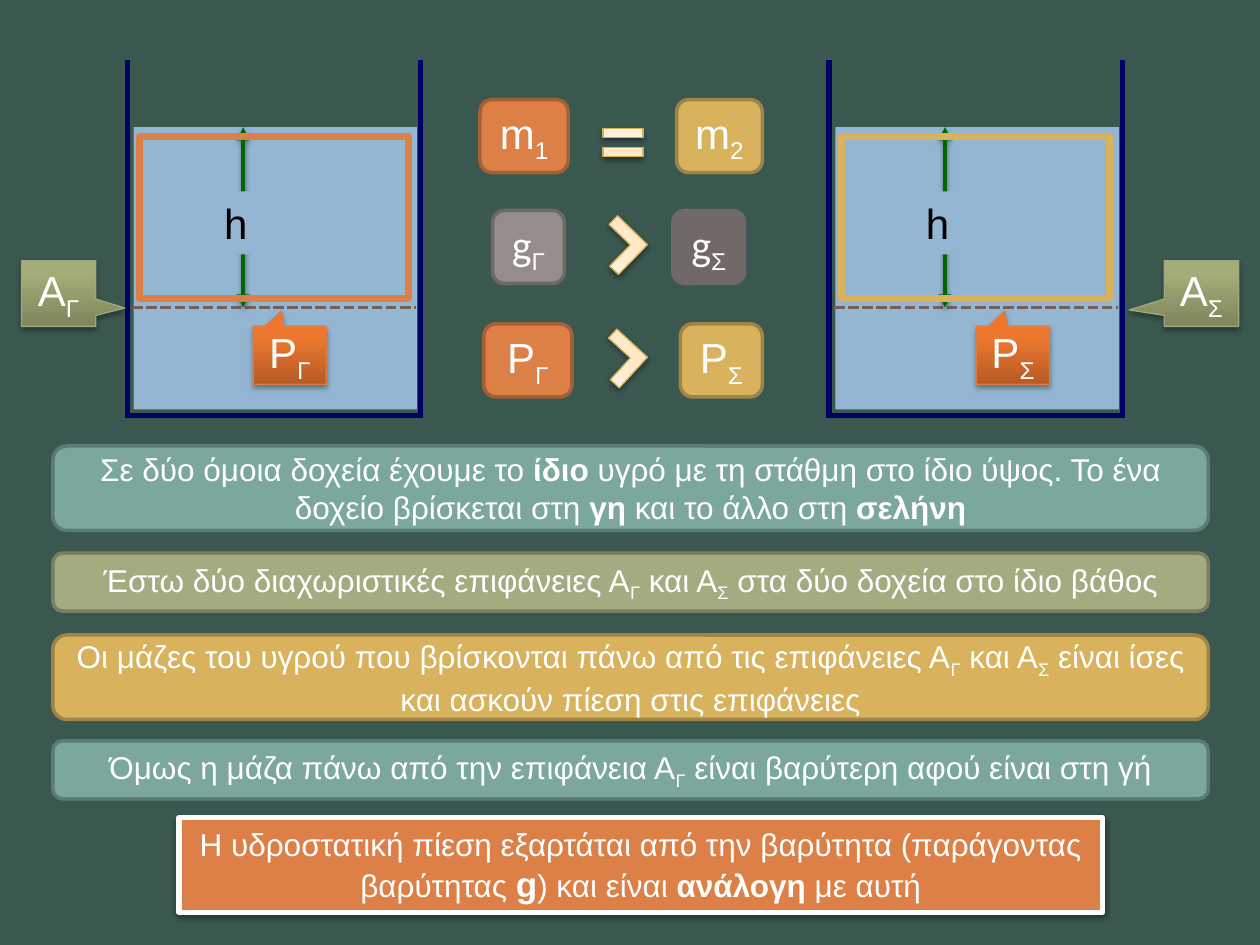
from dataclasses import dataclass

from lxml.etree import SubElement
from pptx import Presentation
from pptx.dml.color import RGBColor
from pptx.enum.dml import MSO_LINE_DASH_STYLE as Dash
from pptx.enum.shapes import MSO_CONNECTOR as Connector, MSO_SHAPE as Shape
from pptx.enum.text import MSO_ANCHOR as Anchor, PP_ALIGN as Align
from pptx.oxml.ns import qn
from pptx.util import Inches, Pt


@dataclass(frozen=True)
class Theme:
    background: str = "3A5750"
    white: str = "FFFFFF"
    black: str = "000000"
    wall: str = "000066"
    liquid: str = "94B6D2"
    dash: str = "775F55"
    arrow: str = "006600"
    # (fill, outline) pairs
    teal: tuple = ("7BA79D", "5B7C74")
    olive: tuple = ("A5AB81", "7A7F5F")
    gold: tuple = ("D8B25C", "A08444")
    orange: tuple = ("DD8047", "A35F35")
    light_grey: tuple = ("968C8C", "6F6868")
    dark_grey: tuple = ("726868", "6F6868")
    # (gradient stops, outline) pairs
    olive_glow: tuple = (((0, "7E845C"), (80, "A4AC77"), (100, "A6AE76")), "A2A87D")
    orange_glow: tuple = (((0, "B65B24"), (80, "EC772F"), (100, "F1762C")), "DC7C42")
    cream_glow: tuple = (((0, "FFE1B2"), (35, "FFE9C8"), (100, "FFF6EA")), "D6AF57")
    font: str = "Arial"
    g_font: str = "Calibri"
    symbol: int = 24
    emphasis: int = 20
    body: int = 18


T = Theme()


def rgb(value):
    return RGBColor.from_string(value)


def sub(text):
    return text, {"sub": True}


def bold(text, size=None):
    return text, {"bold": True, "size": size}


def write(s, pieces, size=T.body, color=T.white, font=T.font, align=Align.CENTER):
    """Fill one paragraph with plain strings and sub() or bold() pieces."""
    tf = s.text_frame
    tf.word_wrap = True
    p = tf.paragraphs[0]
    p.alignment = align
    p.font.size, p.font.name = Pt(size), font
    p.font.color.rgb = rgb(color)
    for piece in pieces:
        text, style = (piece, {}) if isinstance(piece, str) else piece
        r = p.add_run()
        r.text = text
        if style.get("bold"):
            r.font.bold = True
        if style.get("size"):
            r.font.size = Pt(style["size"])
        if style.get("sub"):
            r.font.name = T.font
            r.font._element.set("baseline", "-25000")


def add_shadow(effects, alpha=38, distance=1.6):
    outer = SubElement(effects, qn("a:outerShdw"), blurRad=str(Pt(3.1)),
                       dist=str(Pt(distance)), dir="5400000", rotWithShape="0")
    color = SubElement(outer, qn("a:srgbClr"), val=T.black)
    SubElement(color, qn("a:alpha"), val=str(alpha * 1000))


def fill_gradient(s, stops):
    """Run the stops from the bottom edge to the top edge."""
    s.fill.gradient()
    grad = s._element.spPr.find(qn("a:gradFill"))
    stop_list = grad.find(qn("a:gsLst"))
    for stop in list(stop_list):
        stop_list.remove(stop)
    for position, color in stops:
        stop = SubElement(stop_list, qn("a:gs"), pos=str(position * 1000))
        SubElement(stop, qn("a:srgbClr"), val=color)
    grad.find(qn("a:lin")).set("ang", "16200000")


def add_box(shapes, kind, at, fill=None, line=None, width=2, adjust=(), shadow=None):
    s = shapes.add_shape(kind, *map(Inches, at))
    for i, value in enumerate(adjust):
        s.adjustments[i] = value
    if fill is None:
        s.fill.background()
    elif isinstance(fill, str):
        s.fill.solid()
        s.fill.fore_color.rgb = rgb(fill)
    else:
        fill_gradient(s, fill)
    if line:
        s.line.color.rgb = rgb(line)
        s.line.width = Pt(width)
    else:
        s.line.fill.background()
    s.shadow.inherit = False
    if shadow:
        add_shadow(s._element.spPr.find(qn("a:effectLst")), *shadow)
    return s


def add_line(shapes, start, end, color, width):
    c = shapes.add_connector(Connector.STRAIGHT, *map(Inches, start + end))
    c.line.color.rgb = rgb(color)
    c.line.width = Pt(width)
    SubElement(c._element.spPr, qn("a:effectLst"))
    return c


def add_callout(shapes, at, colors, adjust, pieces):
    s = add_box(shapes, Shape.RECTANGULAR_CALLOUT, at, *colors, 0.75, adjust, (35, 1.8))
    s.text_frame.vertical_anchor = Anchor.MIDDLE
    write(s, pieces, T.symbol)


def add_depth_arrow(shapes, x, top, bottom):
    c = add_line(shapes, (x, top), (x, bottom), T.arrow, 2.5)
    for end in ("a:headEnd", "a:tailEnd"):
        SubElement(c.line._get_or_add_ln(), qn(end), type="triangle")
    add_shadow(c._element.spPr.find(qn("a:effectLst")))


def add_vessel(shapes, x, frame_color):
    """Open vessel with liquid, dividing surface, depth h and framed mass."""
    walls = shapes.add_group_shape().shapes
    for wall_x in (x, x + 2.33):
        add_line(walls, (wall_x, 0.48), (wall_x, 3.32), T.wall, 3)
    add_line(walls, (x + 2.32, 3.3), (x + 0.01, 3.3), T.wall, 3)
    add_box(shapes, Shape.RECTANGLE, (x + 0.05, 1.01, 2.25, 2.24), T.liquid)
    surface = add_line(shapes, (x + 0.04, 2.44), (x + 2.29, 2.44), T.dash, 2)
    surface.line.dash_style = Dash.SQUARE_DOT
    add_depth_arrow(shapes, x + 0.92, 1.01, 2.44)
    h = shapes.add_textbox(*map(Inches, (x + 0.67, 1.52, 0.54, 0.5)))
    h.fill.solid()
    h.fill.fore_color.rgb = rgb(T.liquid)
    write(h, ["h"], T.symbol, T.black, align=Align.LEFT)
    add_box(shapes, Shape.RECTANGLE, (x + 0.1, 1.08, 2.13, 1.29), None, frame_color, 4)


def add_panel(shapes, at, colors, pieces, size=T.body, font=T.font):
    s = add_box(shapes, Shape.ROUNDED_RECTANGLE, at, *colors)
    s.text_frame.vertical_anchor = Anchor.MIDDLE
    write(s, pieces, size, font=font)


def add_relation(shapes, kind, at, adjust, rotation=0):
    s = add_box(shapes, kind, at, *T.cream_glow, 0.75, adjust, (38, 1.6))
    s.rotation = rotation


def add_comparisons(shapes):
    add_relation(shapes, Shape.MATH_EQUAL, (4.73, 0.92, 0.43, 0.42), (0.17, 0.19))
    for y, rotation in ((1.78, 224.1), (2.68, 222.6)):
        add_relation(shapes, Shape.CORNER, (4.74, y, 0.33, 0.33), (0.29, 0.29), rotation)
    for x, y, width, colors, letter, index, font in (
        (3.81, 0.79, 0.7, T.orange, "m", "1", T.font),
        (5.37, 0.79, 0.68, T.gold, "m", "2", T.font),
        (3.91, 1.67, 0.57, T.light_grey, "g", "Γ", T.g_font),
        (5.34, 1.67, 0.57, T.dark_grey, "g", "Σ", T.g_font),
        (3.84, 2.57, 0.7, T.orange, "P", "Γ", T.font),
        (5.4, 2.57, 0.65, T.gold, "P", "Σ", T.font),
    ):
        add_panel(shapes, (x, y, width, 0.58), colors, [letter, sub(index)], T.symbol, font)


def add_statements(shapes):
    for y, height, colors, pieces in (
        (3.54, 0.67, T.teal, [
            "Σε δύο όμοια δοχεία έχουμε το ", bold("ίδιο"),
            " υγρό με τη στάθμη στο ίδιο ύψος. Το ένα δοχείο βρίσκεται στη ",
            bold("γη"), " και το άλλο στη ", bold("σελήνη")]),
        (4.39, 0.46, T.olive, [
            "Έστω δύο διαχωριστικές επιφάνειες Α", sub("Γ"), " και Α", sub("Σ"),
            " στα δύο δοχεία στο ίδιο βάθος"]),
        (5.04, 0.67, T.gold, [
            "Οι μάζες του υγρού που βρίσκονται πάνω από τις επιφάνειες Α", sub("Γ"),
            " και Α", sub("Σ"), " είναι ίσες και ασκούν πίεση στις επιφάνειες"]),
        (5.88, 0.46, T.teal, [
            "Όμως η μάζα πάνω από την επιφάνεια Α", sub("Γ"),
            " είναι βαρύτερη αφού είναι στη γή"]),
    ):
        add_panel(shapes, (0.42, y, 9.17, height), colors, pieces)


def add_conclusion(shapes):
    s = add_box(shapes, Shape.RECTANGLE, (1.42, 6.49, 7.33, 0.75), T.orange[0],
                T.white, 3, shadow=(38, 1.6))
    s.text_frame.vertical_anchor = Anchor.MIDDLE
    write(s, ["Η υδροστατική πίεση εξαρτάται από την βαρύτητα (παράγοντας βαρύτητας ",
              bold("g", T.emphasis), ") και είναι ", bold("ανάλογη"), " με αυτή"])


def main():
    prs = Presentation()
    prs.slide_width, prs.slide_height = Inches(10), Inches(7.5)
    slide = prs.slides.add_slide(prs.slide_layouts[6])
    slide.background.fill.solid()
    slide.background.fill.fore_color.rgb = rgb(T.background)
    shapes = slide.shapes
    for x, frame, area_x, tip, pressure_x, place in (
        (1.01, T.orange[0], 0.17, (0.89, 0.22), 2.01, "Γ"),
        (6.58, T.gold[0], 9.24, (-0.97, 0.25), 7.75, "Σ"),
    ):
        add_vessel(shapes, x, frame)
        add_callout(shapes, (area_x, 2.07, 0.59, 0.52), T.olive_glow, tip, ["A", sub(place)])
        add_callout(shapes, (pressure_x, 2.59, 0.58, 0.46), T.orange_glow,
                    (-0.11, -0.76), ["P", sub(place)])
    add_comparisons(shapes)
    add_statements(shapes)
    add_conclusion(shapes)
    prs.save("out.pptx")


if __name__ == "__main__":
    main()
